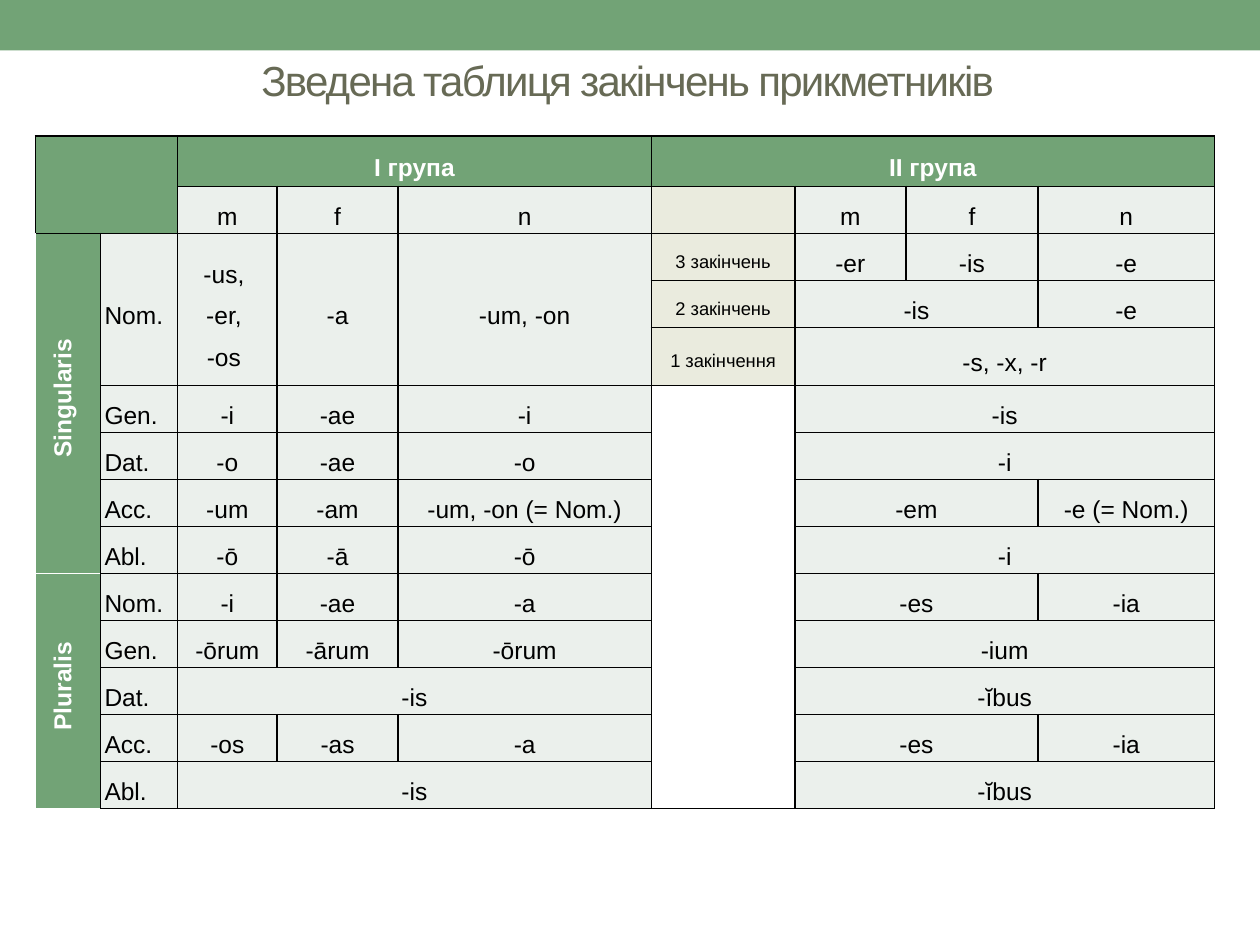
from dataclasses import dataclass

from lxml import etree
from pptx import Presentation
from pptx import util as u
from pptx.dml.color import RGBColor
from pptx.enum import shapes, text
from pptx.oxml import ns


@dataclass(frozen=True)
class Theme:
    font: str = "Arial"
    green: str = "72A376"
    pale: str = "EBF0EC"
    beige: str = "EAEBDE"
    white: str = "FFFFFF"
    black: str = "000000"
    olive: str = "676A55"
    title_size: float = 24
    body_size: float = 14
    label_size: float = 10.5


THEME = Theme()
UP, LEFT = "^", "<"
COLUMNS = [0.52, 0.61, 0.79, 0.96, 2.01, 1.14, 0.88, 1.05, 1.4]
HEADER_HEIGHT, TALL_HEIGHT, TALL_ROW = 0.4, 0.46, 4
GROUP_COLUMN, CASE_COLUMN, LABEL_COLUMN, FIRST_GAP_ROW = 0, 1, 5, 5
ENDINGS = [
    ["", LEFT, "І група", LEFT, LEFT, "ІІ група", LEFT, LEFT, LEFT],
    [UP, LEFT, "m", "f", "n", "", "m", "f", "n"],
    ["Singularis", "Nom.", "-us, \n-er, \n-os ", "-a", "-um, -on", "3 закінчень", "-er", "-is", "-e"],
    [UP, UP, UP, UP, UP, "2 закінчень", "-is", LEFT, "-e"],
    [UP, UP, UP, UP, UP, "1 закінчення", "-s, -x, -r", LEFT, LEFT],
    [UP, "Gen.", "-i", "-ae", "-i", "", "-is", LEFT, LEFT],
    [UP, "Dat.", "-o", "-ae", "-o", "", "-i", LEFT, LEFT],
    [UP, "Acc.", "-um", "-am", "-um, -on (= Nom.)", "", "-em", LEFT, "-e (= Nom.)"],
    [UP, "Abl.", "-ō", "-ā", "-ō", "", "-i", LEFT, LEFT],
    ["Pluralis", "Nom.", "-i", "-ae", "-a", "", "-es", LEFT, "-ia"],
    [UP, "Gen.", "-ōrum", "-ārum", "-ōrum", "", "-ium", LEFT, LEFT],
    [UP, "Dat.", "-is", LEFT, LEFT, "", "-ĭbus", LEFT, LEFT],
    [UP, "Acc.", "-os", "-as", "-a", "", "-es", LEFT, "-ia"],
    [UP, "Abl.", "-is", LEFT, LEFT, "", "-ĭbus", LEFT, LEFT],
]
LAST_ROW = len(ENDINGS) - 1


def apply(target, values):
    for name, value in values.items():
        setattr(target, name, value)


def paint(fill, color):
    fill.solid()
    fill.fore_color.rgb = RGBColor.from_string(color)


def style_font(font, size, color, bold=False):
    apply(font, {"name": THEME.font, "size": u.Pt(size), "bold": bold})
    font.color.rgb = RGBColor.from_string(color)


def add_band(slide, box):
    band = slide.shapes.add_shape(shapes.MSO_SHAPE.RECTANGLE, *box)
    band.shadow.inherit = False
    paint(band.fill, THEME.green)
    band.line.fill.background()


def add_title(slide, box):
    frame = slide.shapes.add_textbox(*box).text_frame
    apply(frame, {"word_wrap": True, "vertical_anchor": text.MSO_ANCHOR.MIDDLE})
    heading = frame.paragraphs[0]
    heading.alignment = text.PP_ALIGN.CENTER
    words = heading.add_run()
    words.text = "Зведена таблиця закінчень прикметників"
    style_font(words.font, THEME.title_size, THEME.olive)
    words.font._element.set("spc", "-100")


def span_of(row, column):
    height = width = 1
    while column + width < len(COLUMNS) and ENDINGS[row][column + width] == LEFT:
        width += 1
    while row + height < len(ENDINGS) and ENDINGS[row + height][column] == UP:
        height += 1
    return height, width


def is_gap(row, column):
    return column == LABEL_COLUMN and row >= FIRST_GAP_ROW


def is_number(row, column):
    return column == GROUP_COLUMN and bool(ENDINGS[row][column])


def cell_fill(row, column):
    if row == 0 or column == GROUP_COLUMN:
        return THEME.green
    if is_gap(row, column):
        return THEME.white
    return THEME.beige if column == LABEL_COLUMN else THEME.pale


def cell_edges(row, column):
    edges = dict.fromkeys("LRTB", THEME.black)
    if is_gap(row, column):
        if row > FIRST_GAP_ROW:
            edges["T"] = None
        if row < LAST_ROW:
            edges["B"] = None
    elif is_number(row, column):
        edges.update(L=THEME.white, B=THEME.white)
        if ENDINGS[row][column] == "Pluralis":
            edges["T"] = THEME.white
    return edges


def draw_edges(cell, edges):
    properties = cell._tc.get_or_add_tcPr()
    for side, color in edges.items():
        edge = etree.SubElement(properties, ns.qn(f"a:ln{side}"), w=str(u.Pt(1)))
        if color is None:
            etree.SubElement(edge, ns.qn("a:noFill"))
        else:
            solid = etree.SubElement(edge, ns.qn("a:solidFill"))
            etree.SubElement(solid, ns.qn("a:srgbClr"), val=color)


def write_cell(cell, row, column):
    cell.text = ENDINGS[row][column]
    header = row == 0 or column == GROUP_COLUMN
    label = column == LABEL_COLUMN and row > 0
    size = THEME.label_size if label else THEME.body_size
    color = THEME.white if header else THEME.black
    left = column == CASE_COLUMN
    for line in cell.text_frame.paragraphs:
        apply(line, {
            "alignment": text.PP_ALIGN.LEFT if left else text.PP_ALIGN.CENTER,
            "line_spacing": 1.5,
        })
        style_font(line.font, size, color, header)
        for words in line.runs:
            style_font(words.font, size, color, header)
        if is_number(row, column):
            line._p.get_or_add_pPr().set("marL", str(u.Inches(0.08)))
    if is_number(row, column):
        cell._tc.get_or_add_tcPr().set("vert", "vert270")


def add_endings_table(slide, box):
    table = slide.shapes.add_table(len(ENDINGS), len(COLUMNS), *box).table
    apply(table, {"first_row": False, "horz_banding": False})
    for column, width in zip(table.columns, COLUMNS):
        column.width = u.Inches(width)
    fixed = {0: u.Inches(HEADER_HEIGHT), TALL_ROW: u.Inches(TALL_HEIGHT)}
    regular = (box[3] - sum(fixed.values())) // (len(ENDINGS) - len(fixed))
    for index, row in enumerate(table.rows):
        row.height = fixed.get(index, regular)

    margins = {
        "margin_left": u.Inches(0.03), "margin_right": u.Inches(0.03),
        "margin_top": 0, "margin_bottom": 0,
        "vertical_anchor": text.MSO_ANCHOR.MIDDLE,
    }
    for row, entries in enumerate(ENDINGS):
        for column, entry in enumerate(entries):
            if entry in (UP, LEFT):
                continue
            height, width = span_of(row, column)
            origin = table.cell(row, column)
            for y in range(row, row + height):
                for x in range(column, column + width):
                    part = table.cell(y, x)
                    apply(part, margins)
                    draw_edges(part, cell_edges(row, column))
                    paint(part.fill, cell_fill(row, column))
            if height * width > 1:
                origin.merge(table.cell(row + height - 1, column + width - 1))
            write_cell(origin, row, column)


def inches(*lengths):
    return tuple(u.Inches(length) for length in lengths)


def main():
    deck = Presentation()
    deck.slide_width, deck.slide_height = inches(10, 7.5)
    slide = deck.slides.add_slide(deck.slide_layouts[6])
    add_band(slide, inches(0, 0, 10, 0.4))
    add_title(slide, inches(1.14, 0.36, 7.68, 0.55))
    add_endings_table(slide, inches(0.28, 1.08, 9.36, 5.34))
    deck.save("out.pptx")


if __name__ == "__main__":
    main()
